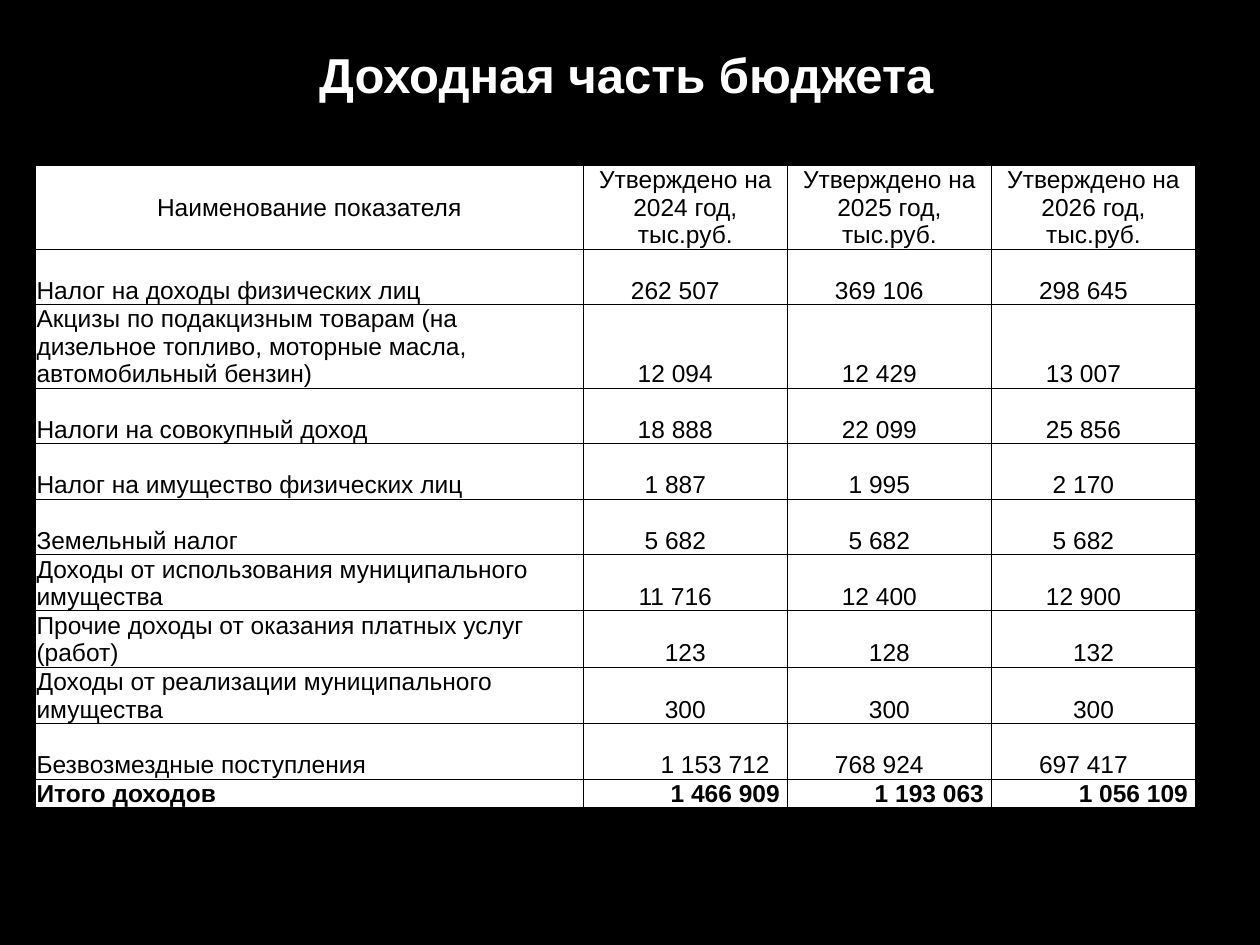
from lxml.etree import SubElement
from pptx import Presentation
from pptx.dml.color import RGBColor
from pptx.enum.text import MSO_ANCHOR as Anchor, PP_ALIGN as Align
from pptx.oxml.ns import qn
from pptx.util import Inches, Pt

BLACK = RGBColor(0, 0, 0)
WHITE = RGBColor(255, 255, 255)
LINE_HEIGHT = 0.22
INSET = 0.01
COLUMN_WIDTHS = [4.35, 1.62, 1.62, 1.62]

HEADERS = ["Наименование показателя"] + [
    f"Утверждено на {year} год, тыс.руб." for year in (2024, 2025, 2026)
]
INCOME = [
    ("Налог на доходы физических лиц", "262 507", "369 106", "298 645"),
    ("Акцизы по подакцизным товарам (на дизельное топливо, моторные масла, "
     "автомобильный бензин)", "12 094", "12 429", "13 007"),
    ("Налоги на совокупный доход", "18 888", "22 099", "25 856"),
    ("Налог на имущество физических лиц", "1 887", "1 995", "2 170"),
    ("Земельный налог", "5 682", "5 682", "5 682"),
    ("Доходы от использования муниципального имущества",
     "11 716", "12 400", "12 900"),
    ("Прочие доходы от оказания платных услуг (работ)", "123", "128", "132"),
    ("Доходы от реализации муниципального имущества", "300", "300", "300"),
    ("Безвозмездные поступления", "1 153 712", "768 924", "697 417"),
]
TOTAL = ("Итого доходов", "1 466 909", "1 193 063", "1 056 109")
ROW_LINES = [3, 2, 3, 2, 2, 2, 2, 2, 2, 2, 1]


def format_text(paragraph, align, size, color, bold=False):
    paragraph.alignment = align
    font = paragraph.runs[0].font
    for name, value in {"name": "Arial", "size": Pt(size), "bold": bold}.items():
        setattr(font, name, value)
    font.color.rgb = color


def add_borders(cell):
    properties = cell._tc.get_or_add_tcPr()
    for position, side in enumerate(("lnL", "lnR", "lnT", "lnB")):
        border = SubElement(properties, qn(f"a:{side}"), w=str(Pt(0.5)))
        fill = SubElement(border, qn("a:solidFill"))
        SubElement(fill, qn("a:srgbClr"), val=str(BLACK))
        properties.insert(position, border)


def fill_cell(cell, text, align, anchor, bold=False, right=INSET):
    cell.text = text
    margins = {"margin_left": INSET, "margin_top": INSET,
               "margin_right": right, "margin_bottom": 0}
    for name, value in margins.items():
        setattr(cell, name, Inches(value))
    cell.vertical_anchor = anchor
    cell.fill.solid()
    cell.fill.fore_color.rgb = WHITE
    format_text(cell.text_frame.paragraphs[0], align, 14, BLACK, bold)
    add_borders(cell)


def amount_format(amount):
    """Return the alignment and right margin that suit the length of an amount."""
    if len(amount) > 7:
        return {"align": Align.RIGHT, "right": 0.14}
    return {"align": Align.CENTER, "right": 0.17 if " " in amount else INSET}


def add_title(slide, text):
    title = slide.shapes.title
    place = {"left": 0.47, "top": 0.23, "width": 9, "height": 0.72}
    for name, value in place.items():
        setattr(title, name, Inches(value))
    title.text_frame.text = text
    title.text_frame.vertical_anchor = Anchor.MIDDLE
    format_text(title.text_frame.paragraphs[0], Align.CENTER, 28, WHITE, True)


def add_income_table(slide):
    table = slide.shapes.add_table(
        len(ROW_LINES), len(COLUMN_WIDTHS), Inches(0.28), Inches(1.31),
        Inches(sum(COLUMN_WIDTHS)), Inches(sum(ROW_LINES) * LINE_HEIGHT)).table
    table.first_row = table.horz_banding = False
    for column, width in zip(table.columns, COLUMN_WIDTHS):
        column.width = Inches(width)
    for row, lines in zip(table.rows, ROW_LINES):
        row.height = Inches(lines * LINE_HEIGHT)

    header_row, *income_rows, total_row = [row.cells for row in table.rows]
    for cell, header in zip(header_row, HEADERS):
        fill_cell(cell, header, Align.CENTER, Anchor.MIDDLE)
    for cells, (label, *amounts) in zip(income_rows, INCOME):
        label_cell, *amount_cells = cells
        fill_cell(label_cell, label, Align.LEFT, Anchor.BOTTOM)
        for cell, amount in zip(amount_cells, amounts):
            fill_cell(cell, amount, anchor=Anchor.BOTTOM, **amount_format(amount))
    label_cell, *amount_cells = total_row
    fill_cell(label_cell, TOTAL[0], Align.JUSTIFY, Anchor.TOP, bold=True)
    for cell, amount in zip(amount_cells, TOTAL[1:]):
        fill_cell(cell, amount, Align.RIGHT, Anchor.MIDDLE, bold=True, right=0.06)


def main():
    deck = Presentation()
    deck.slide_width, deck.slide_height = Inches(10), Inches(7.5)
    slide = deck.slides.add_slide(deck.slide_layouts[5])
    slide.background.fill.solid()
    slide.background.fill.fore_color.rgb = BLACK
    add_title(slide, "Доходная часть бюджета")
    add_income_table(slide)
    deck.save("out.pptx")


if __name__ == "__main__":
    main()
